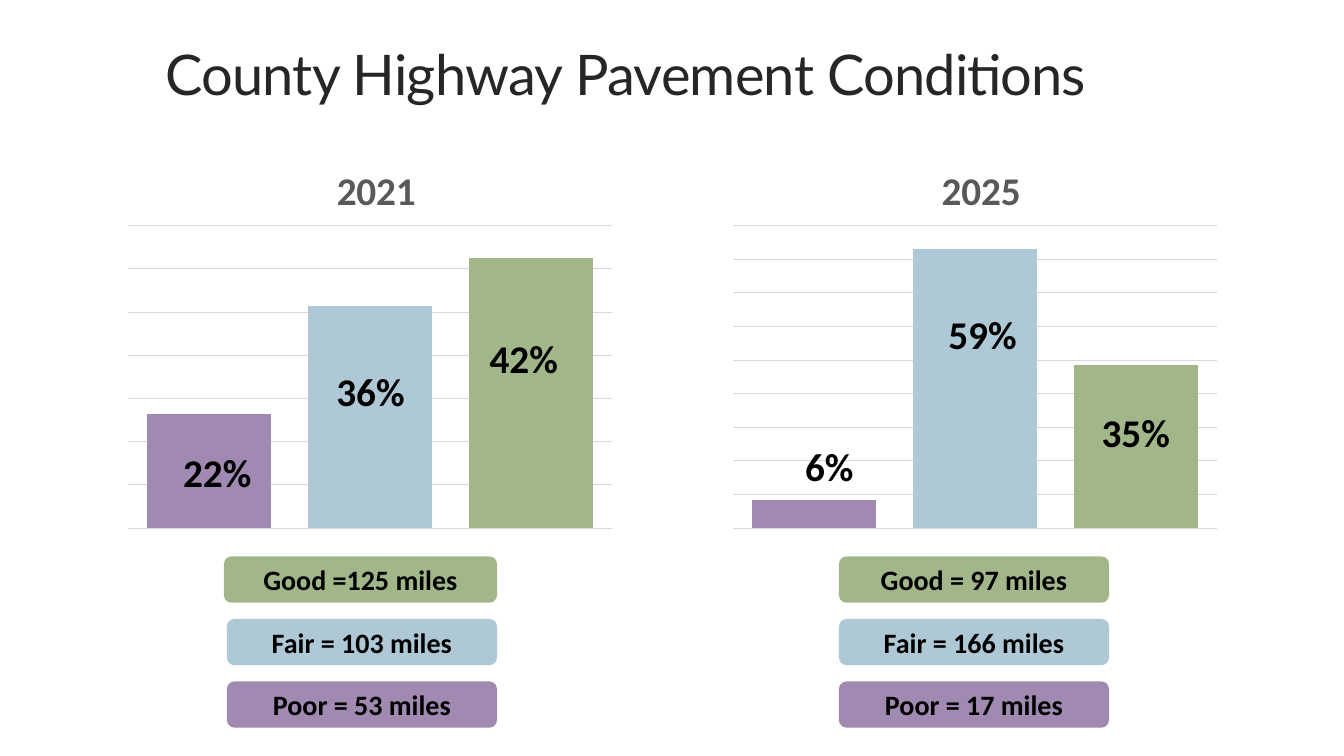
from lxml import etree
from pptx import Presentation
from pptx.chart.data import CategoryChartData
from pptx.dml.color import RGBColor
from pptx.enum.chart import XL_CHART_TYPE as CT
from pptx.enum.shapes import MSO_SHAPE as SHAPE
from pptx.enum.text import MSO_ANCHOR as ANCHOR, PP_ALIGN as ALIGN
from pptx.oxml.ns import qn
from pptx.util import Pt

PX = 9144
COLORS = {"Poor": "A18AB2", "Fair": "AEC8D5", "Good": "A1B78A",
          "heading": "262626", "year": "595959", "grid": "D9D9D9", "text": "000000"}
YEARS = [
    {"year": "2021", "left": 117, "miles": [53, 103, 125], "axis_max": 140,
     "label_x": 37, "labels": [("22%", 308), ("36%", 227), ("42%", 195)],
     "pills": [("Good", "Good =125 miles", 105, 271),
               ("Fair", "Fair = 103 miles", 108, 268),
               ("Poor", "Poor = 53 miles", 108, 268)]},
    {"year": "2025", "left": 717, "miles": [17, 166, 97], "axis_max": 180,
     "label_x": 44, "labels": [("6%", 302), ("59%", 171), ("35%", 268)],
     "pills": [("Good", "Good = 97 miles", 115, 268),
               ("Fair", "Fair = 166 miles", 115, 268),
               ("Poor", "Poor = 17 miles", 115, 268)]},
]


def px(*lengths):
    return [n * PX for n in lengths]


def rgb(name):
    return RGBColor.from_string(COLORS[name])


def set_font(font, size, color="text", bold=True, name="Calibri"):
    font.name, font.size, font.bold = name, Pt(size), bold
    font.color.rgb = rgb(color)


def set_text(tf, text, size):
    p = tf.paragraphs[0]
    p.text, p.alignment = text, ALIGN.CENTER
    set_font(p.font, size)


def set_layout(parent, index, **fractions):
    for old in parent.findall(qn("c:layout")):
        parent.remove(old)
    layout = etree.Element(qn("c:layout"))
    manual = etree.SubElement(layout, qn("c:manualLayout"))
    if "w" in fractions:
        etree.SubElement(manual, qn("c:layoutTarget"), val="inner")
    for mode in ("xMode", "yMode"):
        etree.SubElement(manual, qn("c:" + mode), val="edge")
    for key, value in fractions.items():
        etree.SubElement(manual, qn("c:" + key), val=str(value))
    parent.insert(index, layout)


def add_heading(s, x, y, w, h):
    tf = s.shapes.add_textbox(*px(x, y, w, h)).text_frame
    tf.word_wrap, tf.vertical_anchor = True, ANCHOR.BOTTOM
    p = tf.paragraphs[0]
    p.line_spacing = 0.85
    r = p.add_run()
    r.text = "County Highway Pavement Conditions"
    set_font(r.font, 40, "heading", False, "Lato")
    r.font._element.set("spc", "-50")


def add_bars(s, data, x, y, w, h):
    chart_data = CategoryChartData()
    chart_data.categories = ["1", "2", "3"]
    for i, miles in enumerate(data["miles"]):
        values = [miles if i == j else None for j in range(3)]
        chart_data.add_series(f"Series {i + 1}", values)
    chart = s.shapes.add_chart(CT.COLUMN_CLUSTERED, *px(x, y, w, h), chart_data).chart
    set_font(chart.font, 10, bold=False, name="Lato")
    chart.has_legend = False
    chart.has_title = True
    p = chart.chart_title.text_frame.paragraphs[0]
    r = p.add_run()
    r.text = data["year"]
    set_font(r.font, 28, "year")

    plot = chart.plots[0]
    plot.gap_width, plot.overlap, plot.vary_by_categories = 30, 100, False
    for series, condition in zip(plot.series, ("Poor", "Fair", "Good")):
        series.format.fill.solid()
        series.format.fill.fore_color.rgb = rgb(condition)
    axis = chart.value_axis
    axis.minimum_scale, axis.maximum_scale, axis.major_unit = 0, data["axis_max"], 20
    axis.has_major_gridlines = True
    line = axis.major_gridlines.format.line
    line.width, line.color.rgb = Pt(0.75), rgb("grid")
    axis.visible = chart.category_axis.visible = False
    root = chart._chartSpace.chart
    set_layout(root.find(qn("c:title")), 1, x=0.42, y=0.06)
    set_layout(root.plotArea, 0, x=0.02, y=0.23, w=0.96, h=0.75)


def add_labels(s, data, x, y):
    for i, (text, top) in enumerate(data["labels"]):
        left = x + data["label_x"] + 152 * i
        tf = s.shapes.add_textbox(*px(left, y + top, 123, 57)).text_frame
        tf.word_wrap = True
        set_text(tf, text, 28)


def add_pills(s, data, x, y):
    for i, (condition, text, left, width) in enumerate(data["pills"]):
        sp = s.shapes.add_shape(SHAPE.ROUNDED_RECTANGLE, *px(x + left, y + 62 * i, width, 46))
        sp.shadow.inherit = False
        sp.fill.solid()
        sp.fill.fore_color.rgb = rgb(condition)
        sp.line.fill.background()
        sp.text_frame.vertical_anchor = ANCHOR.MIDDLE
        set_text(sp.text_frame, text, 20)


def add_year(s, data, x, y, w, h):
    add_bars(s, data, x, y, w, h)
    add_labels(s, data, x, y)
    add_pills(s, data, x, y + h + 20)


def main():
    """Build the pavement conditions slide."""
    prs = Presentation()
    prs.slide_width, prs.slide_height = px(1333, 750)
    s = prs.slides.add_slide(prs.slide_layouts[6])
    add_heading(s, 154, 30, 1100, 81)
    for data in YEARS:
        add_year(s, data, data["left"], 132, 500, 400)
    prs.save("out.pptx")


if __name__ == "__main__":
    main()
